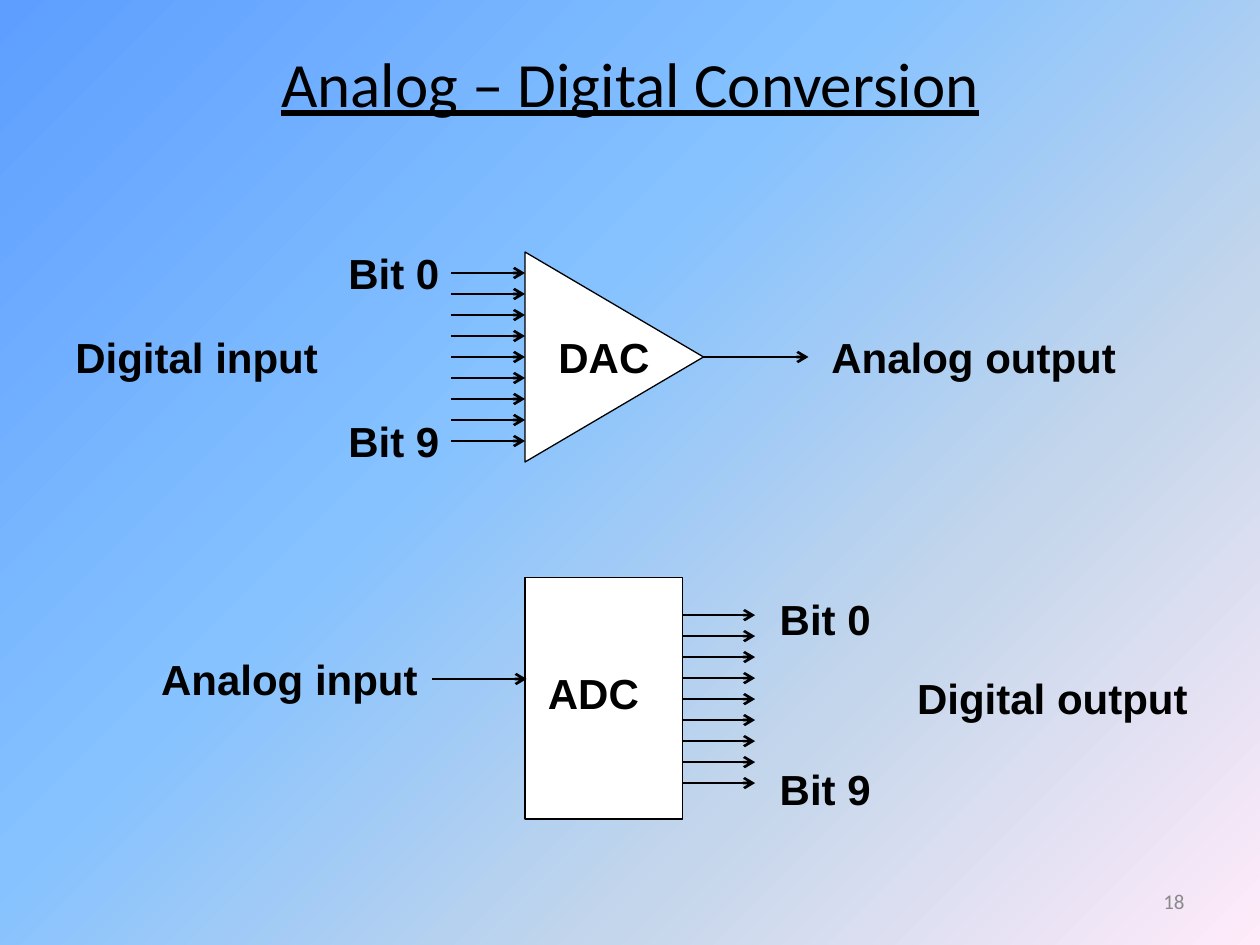
import pptx
import pptx.util
import pptx.dml.color
import pptx.enum.shapes
import pptx.enum.text
import pptx.oxml
import pptx.oxml.ns
import lxml.etree

Pt = pptx.util.Pt
RGB = pptx.dml.color.RGBColor
SHAPE = pptx.enum.shapes.MSO_SHAPE
LINE = pptx.enum.shapes.MSO_CONNECTOR
ALIGN = pptx.enum.text.PP_ALIGN
ANCHOR = pptx.enum.text.MSO_ANCHOR
FIT = pptx.enum.text.MSO_AUTO_SIZE
qn = pptx.oxml.ns.qn

BLACK = RGB(0x00, 0x00, 0x00)
WHITE = RGB(0xFF, 0xFF, 0xFF)
GRAY = RGB(0x89, 0x89, 0x89)
SKY = [
    (0, RGB(0x5E, 0x9E, 0xFF)),
    (40, RGB(0x85, 0xC2, 0xFF)),
    (70, RGB(0xC4, 0xD6, 0xEB)),
    (100, RGB(0xFF, 0xEB, 0xFA)),
]


class Board:
    """Holds the text styles and the current slide."""

    label = dict(name="Arial", size=Pt(24), bold=True)
    head = dict(name="Calibri", size=Pt(36), underline=True)
    foot = dict(name="Calibri", size=Pt(12))

    def __init__(self, slide):
        self.slide = slide

    def style(self, para, font, color=BLACK):
        for key, value in font.items():
            setattr(para.font, key, value)
        para.font.color.rgb = color

    def ground(self, stops):
        fill = self.slide.background.fill
        fill.gradient()
        fill.gradient_angle = 315
        bag = next(self.slide.element.iter(qn("a:gsLst")))
        for old in list(bag):
            bag.remove(old)
        for pos, color in stops:
            stop = lxml.etree.SubElement(bag, qn("a:gs"), pos=str(pos * 1000))
            lxml.etree.SubElement(stop, qn("a:srgbClr"), val=str(color))

    def title(self, text, x, y, w, h):
        box = self.slide.shapes.title
        place = dict(left=x, top=y, width=w, height=h)
        for key, value in place.items():
            setattr(box, key, Pt(value))
        box.text_frame.text = text
        box.text_frame.vertical_anchor = ANCHOR.MIDDLE
        para = box.text_frame.paragraphs[0]
        para.alignment = ALIGN.CENTER
        self.style(para, self.head)

    def text(self, text, x, y, w=72, h=36):
        box = self.slide.shapes.add_textbox(Pt(x), Pt(y), Pt(w), Pt(h))
        frame = box.text_frame
        frame.word_wrap = True
        frame.auto_size = FIT.SHAPE_TO_FIT_TEXT
        frame.text = text
        self.style(frame.paragraphs[0], self.label)

    def number(self, text, x, y, w, h):
        box = self.slide.shapes.add_textbox(Pt(x), Pt(y), Pt(w), Pt(h))
        frame = box.text_frame
        frame.word_wrap = True
        frame.vertical_anchor = ANCHOR.MIDDLE
        frame.text = text
        frame.paragraphs[0].alignment = ALIGN.RIGHT
        self.style(frame.paragraphs[0], self.foot, GRAY)

    def block(self, kind, x, y, w, h, turn=0):
        shape = self.slide.shapes.add_shape(kind, Pt(x), Pt(y), Pt(w), Pt(h))
        shape.shadow.inherit = False
        shape.rotation = turn
        shape.fill.solid()
        shape.fill.fore_color.rgb = WHITE
        shape.line.color.rgb = BLACK
        shape.line.width = Pt(0.75)

    def arrow(self, start, end, y):
        wire = self.slide.shapes.add_connector(
            LINE.STRAIGHT, Pt(start), Pt(y), Pt(end), Pt(y))
        wire.line.color.rgb = BLACK
        wire.line.width = Pt(1.5)
        props = wire.line._get_or_add_ln()
        lxml.etree.SubElement(props, qn("a:tailEnd"), type="arrow")
        lxml.etree.SubElement(props.getparent(), qn("a:effectLst"))

    def bus(self, start, end, top, count=9, step=12):
        for i in range(count):
            self.arrow(start, end, top + i * step)


def main():
    deck = pptx.Presentation()
    deck.slide_width, deck.slide_height = Pt(720), Pt(540)
    board = Board(deck.slides.add_slide(deck.slide_layouts[5]))

    # Background, title and page number
    board.ground(SKY)
    board.title("Analog – Digital Conversion", 36, 21.6, 648, 50.4)
    board.number("18", 516, 500.5, 168, 28.75)

    # Digital to analog: bits in, one signal out
    board.block(SHAPE.ISOSCELES_TRIANGLE, 291, 153, 120, 102, turn=90)
    board.text("DAC", 312, 186)
    board.bus(258, 300, 156)
    board.text("Bit 0", 192, 138)
    board.text("Bit 9", 192, 234)
    board.text("Digital input", 36, 186, 180)
    board.arrow(402, 462, 204)
    board.text("Analog output", 468, 186, 180)

    # Analog to digital: one signal in, bits out
    board.block(SHAPE.RECTANGLE, 300, 330, 90, 138)
    board.text("ADC", 306, 378)
    board.arrow(247, 301, 388)
    board.text("Analog input", 85, 370, 180)
    board.bus(389.5, 431.5, 351.5)
    board.text("Bit 0", 438.5, 335.5)
    board.text("Bit 9", 438.5, 432.5)
    board.text("Digital output", 517, 381, 180)

    deck.save("out.pptx")


if __name__ == "__main__":
    main()
